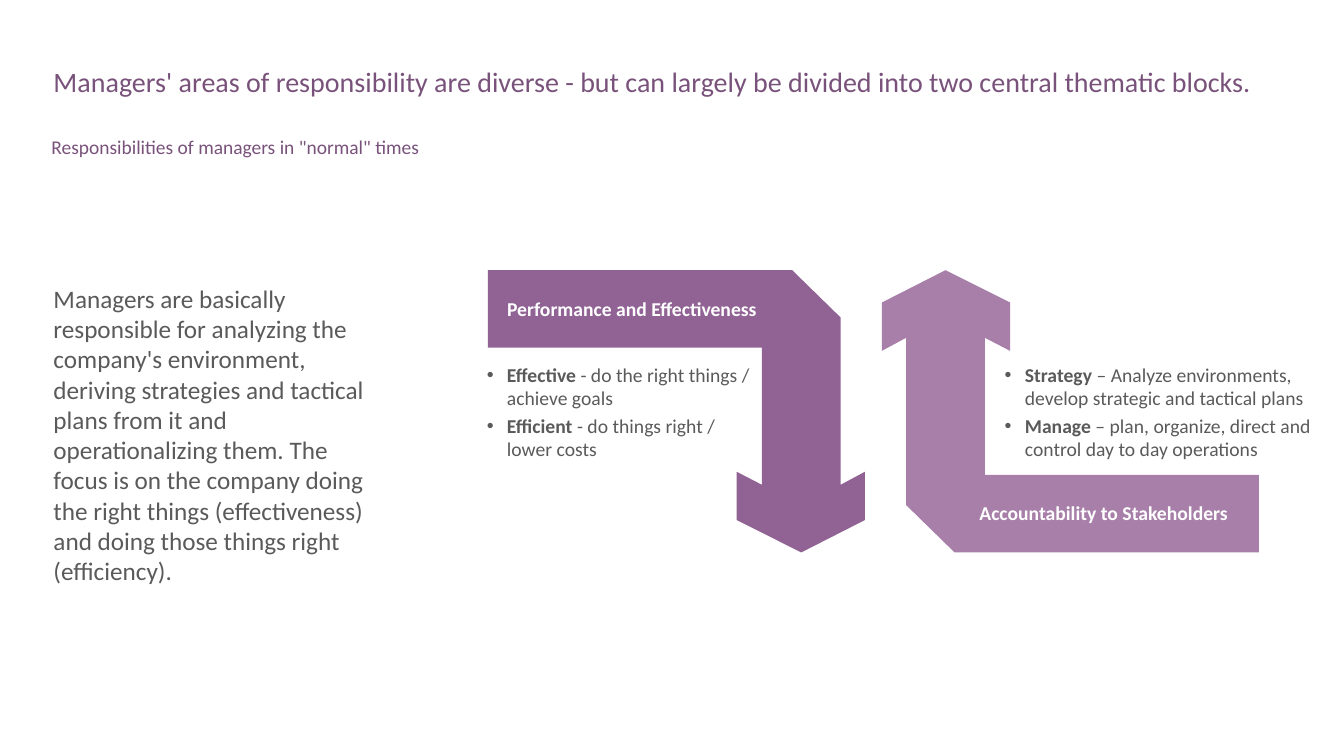
from dataclasses import dataclass
from lxml.etree import SubElement
from pptx import Presentation
from pptx.dml.color import RGBColor as Rgb
from pptx.enum.text import MSO_ANCHOR as Anchor, MSO_AUTO_SIZE as AutoSize, PP_ALIGN as Align
from pptx.oxml.ns import qn
from pptx.util import Pt


@dataclass(frozen=True)
class Theme:
    font: str = "Calibri"
    heading: str = "79527B"
    body: str = "595A59"
    white: str = "FFFFFF"
    dark_arrow: str = "916395"
    light_arrow: str = "A77FA9"
    title_size: float = 20
    subtitle_size: float = 13.9
    intro_size: float = 18
    label_size: float = 14


THEME = Theme()
DOWN_ARROW = [
    (600.5, 226.8), (600.5, 346.3), (617.8, 337), (617.8, 371.5),
    (572.4, 394.6), (526.3, 371.5), (526.3, 337), (544.3, 346.3),
    (544.3, 248.4), (348.5, 248.4), (348.5, 193), (565.9, 193),
]
UP_ARROW = [(1247.8 - x, 587.6 - y) for x, y in DOWN_ARROW]
PERFORMANCE = [
    ("Effective", " - do the right things /\nachieve goals"),
    ("Efficient", " - do things right /\nlower costs"),
]
ACCOUNTABILITY = [
    ("Strategy", " – Analyze environments, develop strategic and tactical plans"),
    ("Manage", " – plan, organize, direct and control day to day operations"),
]


def write(para, text, *, size, color, bold=False):
    for number, line in enumerate(text.split("\n")):
        if number:
            para.add_line_break()
        span = para.add_run()
        span.text = line
        span.font.name = THEME.font
        span.font.size = Pt(size)
        span.font.bold = bold
        span.font.color.rgb = Rgb.from_string(color)


def set_bullet(para, char=None, indent=0, hanging=0):
    props = para._p.get_or_add_pPr()
    props.set("marL", str(Pt(indent)))
    props.set("indent", str(-Pt(hanging)))
    if char is None:
        SubElement(props, qn("a:buNone"))
        return
    color = SubElement(props, qn("a:buClr"))
    SubElement(color, qn("a:srgbClr"), val=THEME.body)
    SubElement(props, qn("a:buFont"), typeface="Arial")
    SubElement(props, qn("a:buChar"), char=char)


def fill_placeholder(box, text, bounds, *, anchor=Anchor.TOP, spacing=1.0, **style):
    box.left, box.top, box.width, box.height = map(Pt, bounds)
    frame = box.text_frame
    frame.word_wrap = True
    frame.auto_size = AutoSize.NONE
    frame.vertical_anchor = anchor
    para = frame.paragraphs[0]
    set_bullet(para)
    para.alignment = Align.LEFT
    para.line_spacing = spacing
    para.space_before = Pt(0)
    write(para, text, **style)


def add_arrow(page, points, color):
    corners = [(Pt(x), Pt(y)) for x, y in points]
    builder = page.shapes.build_freeform(*corners[0])
    builder.add_line_segments(corners[1:], close=True)
    arrow = builder.convert_to_shape()
    arrow.shadow.inherit = False
    arrow.fill.solid()
    arrow.fill.fore_color.rgb = Rgb.from_string(color)
    arrow.line.fill.background()


def add_label(page, text, bounds, align):
    frame = page.shapes.add_textbox(*map(Pt, bounds)).text_frame
    frame.word_wrap = True
    frame.margin_left = frame.margin_right = frame.margin_top = frame.margin_bottom = Pt(0)
    para = frame.paragraphs[0]
    para.alignment = align
    write(para, text, size=THEME.label_size, color=THEME.white, bold=True)


def add_bullets(page, items, left):
    frame = page.shapes.add_textbox(Pt(left), Pt(255.6), Pt(241.2), Pt(78.5)).text_frame
    frame.word_wrap = True
    frame.auto_size = AutoSize.SHAPE_TO_FIT_TEXT
    for number, (term, meaning) in enumerate(items):
        para = frame.add_paragraph() if number else frame.paragraphs[0]
        set_bullet(para, "•", indent=21.6, hanging=14.4)
        para.level = 1
        if number:
            para.space_before = Pt(2.8)
        write(para, term, size=THEME.label_size, color=THEME.body, bold=True)
        write(para, meaning, size=THEME.label_size, color=THEME.body)


def main():
    deck = Presentation()
    deck.slide_width, deck.slide_height = Pt(960), Pt(540)
    page = deck.slides.add_slide(deck.slide_layouts[3])
    title, intro, subtitle = page.placeholders

    fill_placeholder(
        intro,
        "Managers are basically responsible for analyzing the company's environment, "
        "deriving strategies and tactical plans from it and operationalizing them. "
        "The focus is on the company doing the right things (effectiveness) "
        "and doing those things right (efficiency).",
        (31, 128.9, 251.3, 362.9),
        anchor=Anchor.MIDDLE, size=THEME.intro_size, color=THEME.body,
    )
    fill_placeholder(
        title,
        "Managers' areas of responsibility are diverse - "
        "but can largely be divided into two central thematic blocks.",
        (31, 45.4, 902.9, 46.1),
        spacing=0.9, size=THEME.title_size, color=THEME.heading,
    )
    fill_placeholder(
        subtitle,
        'Responsibilities of managers in "normal" times',
        (29.5, 97.2, 904.3, 20.2),
        spacing=0.7, size=THEME.subtitle_size, color=THEME.heading,
    )

    add_arrow(page, UP_ARROW, THEME.light_arrow)
    add_arrow(page, DOWN_ARROW, THEME.dark_arrow)
    add_label(page, "Performance and Effectiveness", (362.2, 212.4, 200.2, 21.6), Align.LEFT)
    add_label(page, "Accountability to Stakeholders", (690.5, 357.8, 195.8, 21.6), Align.CENTER)
    add_bullets(page, PERFORMANCE, 333.4)
    add_bullets(page, ACCOUNTABILITY, 703.4)
    deck.save("out.pptx")


if __name__ == "__main__":
    main()
